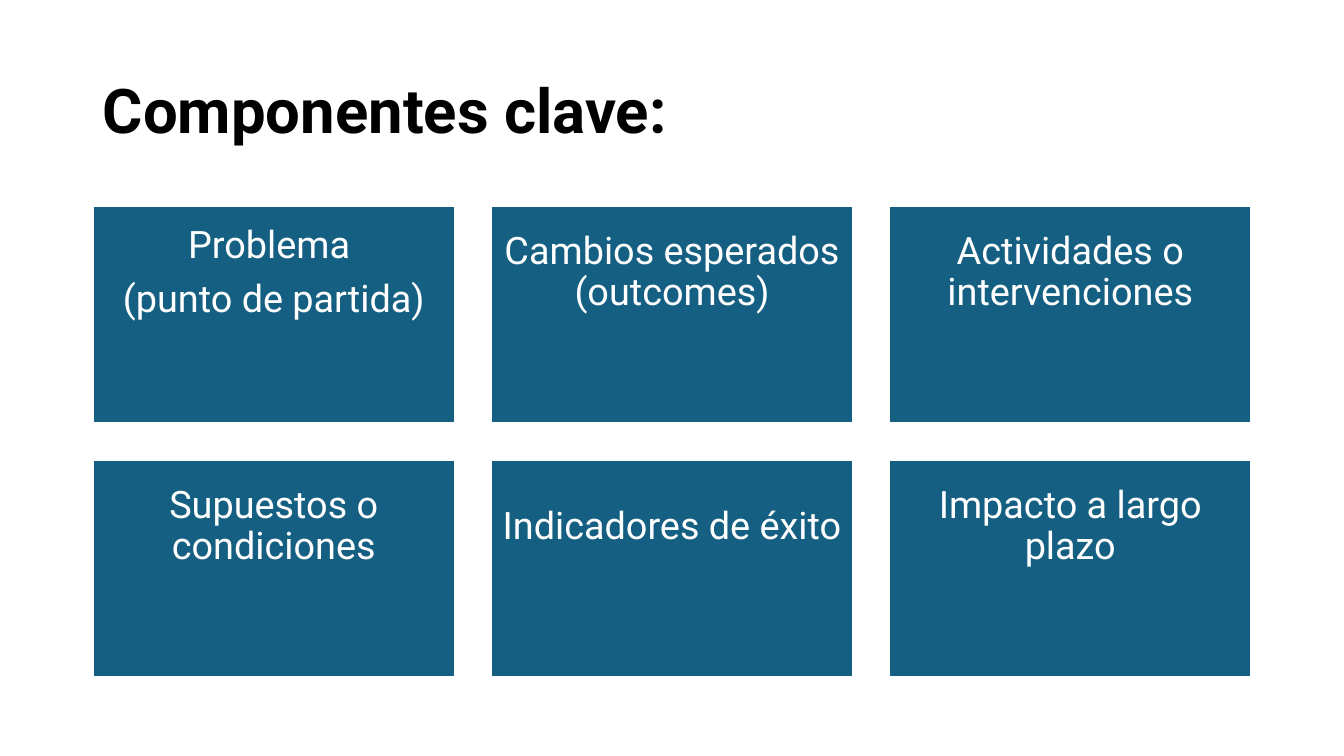
from pptx import Presentation
from pptx import util as u
from pptx.dml.color import RGBColor
from pptx.enum import shapes, text

BLACK = RGBColor(0x00, 0x00, 0x00)
WHITE = RGBColor(0xFF, 0xFF, 0xFF)
TEAL = RGBColor(0x15, 0x60, 0x82)

COMPONENTS = [
    "Problema \n(punto de partida)",
    "Cambios esperados (outcomes)",
    "Actividades o intervenciones",
    "Supuestos o condiciones",
    "Indicadores de éxito",
    "Impacto a largo plazo",
]
COLUMNS = 3
LEFT, TOP = 0.92, 2.04
CARD_WIDTH, CARD_HEIGHT = 3.59, 2.16
GAP = 0.36


class SlideBuilder:
    font_name = "Roboto"

    def __init__(self, slide):
        self.slide = slide

    def format_text(self, frame, size, color, alignment, bold=False):
        frame.word_wrap = True
        frame.vertical_anchor = text.MSO_ANCHOR.MIDDLE
        for paragraph in frame.paragraphs:
            paragraph.alignment = alignment
            paragraph.line_spacing = 0.9
            for run in paragraph.runs:
                run.font.name = self.font_name
                run.font.size = u.Pt(size)
                run.font.bold = bold
                run.font.color.rgb = color

    def title(self, wording):
        title = self.slide.shapes.title
        title.left, title.top = u.Inches(LEFT), u.Inches(0.4)
        title.width, title.height = u.Inches(11.5), u.Inches(1.45)
        title.text_frame.text = wording
        self.format_text(title.text_frame, 44, BLACK, text.PP_ALIGN.LEFT, bold=True)

    def card(self, wording, left, top):
        """Add a filled card whose text sits above its middle."""
        card = self.slide.shapes.add_shape(
            shapes.MSO_SHAPE.RECTANGLE, u.Inches(left), u.Inches(top),
            u.Inches(CARD_WIDTH), u.Inches(CARD_HEIGHT))
        card.shadow.inherit = False
        card.fill.solid()
        card.fill.fore_color.rgb = TEAL
        card.line.color.rgb = WHITE
        card.line.width = u.Pt(1.5)

        frame = card.text_frame
        frame.text = wording
        frame.margin_left = frame.margin_right = u.Inches(0.1)
        frame.margin_top = u.Inches(0.11)
        frame.margin_bottom = u.Inches(0.93)
        self.format_text(frame, 27, WHITE, text.PP_ALIGN.CENTER)
        for paragraph in frame.paragraphs:
            paragraph.space_after = u.Pt(9.5)


def main():
    presentation = Presentation()
    presentation.slide_width = u.Inches(13.33)
    presentation.slide_height = u.Inches(7.5)
    title_only = presentation.slide_layouts[5]
    builder = SlideBuilder(presentation.slides.add_slide(title_only))

    builder.title("Componentes clave:")
    for index, wording in enumerate(COMPONENTS):
        row, column = divmod(index, COLUMNS)
        builder.card(wording,
                     LEFT + column * (CARD_WIDTH + GAP),
                     TOP + row * (CARD_HEIGHT + GAP))

    presentation.save("out.pptx")


if __name__ == "__main__":
    main()
